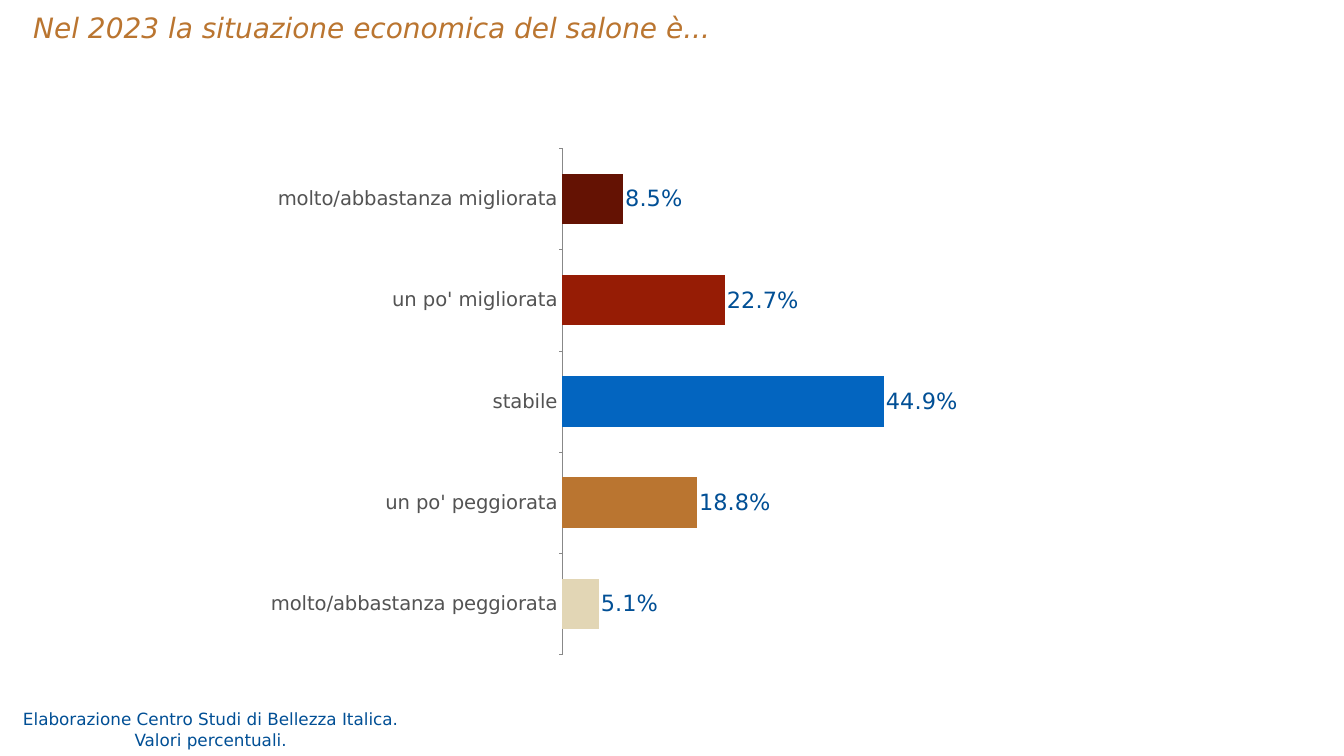
from lxml import etree
from pptx import Presentation
from pptx.chart.data import CategoryChartData
from pptx.dml.color import RGBColor
from pptx.enum.chart import XL_CHART_TYPE as ChartType, XL_LABEL_POSITION as LabelPos
from pptx.enum.chart import XL_TICK_MARK as Tick
from pptx.enum.text import MSO_ANCHOR as Anchor, PP_ALIGN as Align
from pptx.oxml.ns import qn
from pptx.util import Inches, Pt

W, H = 26.67, 15
FONT = "DejaVu Sans"
BLUE, OCHRE, GREY = "014F95", "BA7530", "535353"
ANSWERS = [
    ("molto/abbastanza migliorata", 0.085, "641203"),
    ("un po' migliorata", 0.227, "961C05"),
    ("stabile", 0.449, "0365C0"),
    ("un po' peggiorata", 0.188, OCHRE),
    ("molto/abbastanza peggiorata", 0.051, "E2D6B5"),
]


def color(hex_value):
    return RGBColor.from_string(hex_value)


def style(font, size, hex_value):
    font.name, font.size = FONT, Pt(size)
    font.color.rgb = color(hex_value)


def place(box):
    return [Inches(v) for v in box]


def add_text(s, box, text, size, hex_value, align=Align.LEFT, italic=False, spacing=1.0):
    tf = s.shapes.add_textbox(*place(box)).text_frame
    tf.word_wrap = True
    tf.vertical_anchor = Anchor.MIDDLE
    tf.margin_left = tf.margin_right = tf.margin_top = tf.margin_bottom = Inches(0.06)
    tf.text = text
    for p in tf.paragraphs:
        p.alignment, p.line_spacing = align, spacing
        for r in p.runs:
            style(r.font, size, hex_value)
            r.font.italic = italic


def set_plot_layout(chart, shares):
    area = chart.element.find(".//" + qn("c:plotArea"))
    for old in area.findall(qn("c:layout")):
        area.remove(old)
    layout = etree.Element(qn("c:layout"))
    area.insert(0, layout)
    manual = etree.SubElement(layout, qn("c:manualLayout"))
    settings = [("layoutTarget", "inner"), ("xMode", "edge"), ("yMode", "edge")]
    for tag, value in settings + list(zip("xywh", shares)):
        etree.SubElement(manual, qn("c:" + tag)).set("val", str(value))


def add_answers_chart(s, box):
    names, values, fills = zip(*ANSWERS)
    data = CategoryChartData(number_format="0.0%")
    data.categories = names
    data.add_series("Series 1", values)
    chart = s.shapes.add_chart(ChartType.BAR_CLUSTERED, *place(box), data).chart
    chart.has_legend = chart.has_title = False
    style(chart.font, 24, "000000")
    set_plot_layout(chart, (0.443, 0.031, 0.463, 0.942))

    axis = chart.category_axis
    axis.reverse_order = True
    axis.major_tick_mark, axis.minor_tick_mark = Tick.OUTSIDE, Tick.NONE
    axis.format.line.color.rgb = color("888888")
    axis.format.line.width = Pt(0.75)
    style(axis.tick_labels.font, 28, GREY)

    scale = chart.value_axis
    scale.minimum_scale, scale.maximum_scale = 0, 0.5
    scale.has_major_gridlines = False
    scale.visible = False

    plot = chart.plots[0]
    plot.gap_width = 100
    plot.vary_by_categories = False
    series = plot.series[0]
    for i, fill in enumerate(fills):
        bar = series.points[i].format.fill
        bar.solid()
        bar.fore_color.rgb = color(fill)
    labels = series.data_labels
    labels.show_value = True
    labels.number_format, labels.number_format_is_linked = "0.0%", False
    labels.position = LabelPos.OUTSIDE_END
    style(labels.font, 32, BLUE)


def main():
    prs = Presentation()
    prs.slide_width, prs.slide_height = Inches(W), Inches(H)
    s = prs.slides.add_slide(prs.slide_layouts[6])
    add_text(s, (0.6, 0.07, 25.44, 0.83), "Nel 2023\u00a0la situazione economica del salone è...",
             40, OCHRE, italic=True, spacing=1.2)
    add_answers_chart(s, (4.36, 2.61, 15.35, 10.67))
    add_text(s, (-0.03, 14.01, 8.42, 0.92),
             "Elaborazione Centro Studi di Bellezza Italica.\nValori percentuali.",
             24, BLUE, align=Align.CENTER)
    prs.save("out.pptx")


if __name__ == "__main__":
    main()
